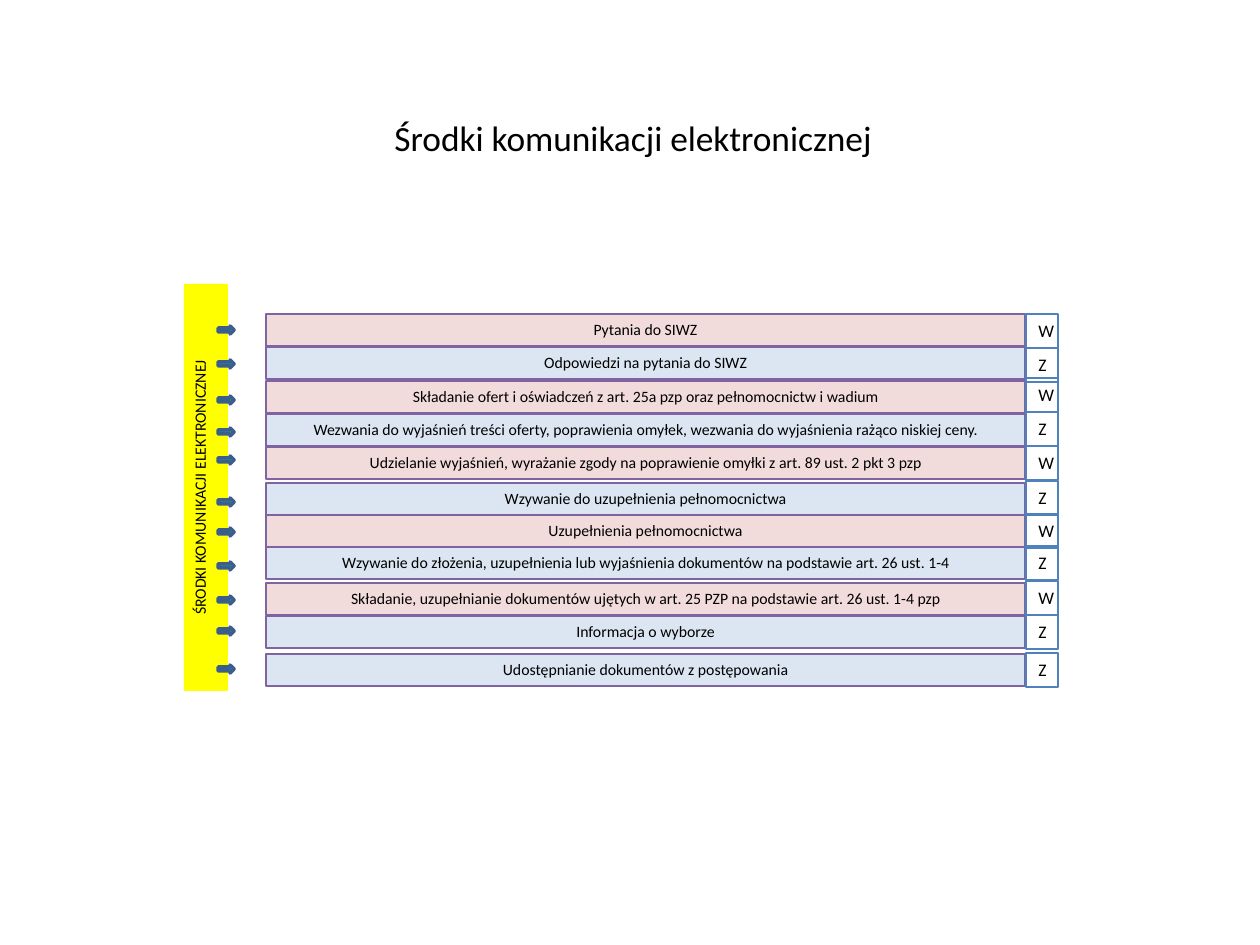
"""Build the slide on electronic means of communication in a tender."""
from dataclasses import dataclass

from pptx import Presentation
from pptx.dml.color import RGBColor
from pptx.enum.shapes import MSO_SHAPE
from pptx.enum.text import MSO_ANCHOR, PP_ALIGN
from pptx.util import Emu, Pt

RECTANGLE, ARROW = MSO_SHAPE.RECTANGLE, MSO_SHAPE.RIGHT_ARROW
CENTER = PP_ALIGN.CENTER
TOP, MIDDLE = MSO_ANCHOR.TOP, MSO_ANCHOR.MIDDLE

TITLE = "Środki komunikacji elektronicznej"
CHANNEL = "ŚRODKI KOMUNIKACJI ELEKTRONICZNEJ"

# party, step, then the tops of the step, the party box and the arrow
STEPS = [
    ("W", "Pytania do SIWZ", 314, 314, 326),
    ("Z", "Odpowiedzi na pytania do SIWZ", 347, 348, 360),
    ("W", "Składanie ofert i oświadczeń z art. 25a pzp oraz pełnomocnictw i wadium",
     381, 378, 396),
    ("Z", "Wezwania do wyjaśnień treści oferty, poprawienia omyłek, "
          "wezwania do wyjaśnienia rażąco niskiej ceny.", 414, 412, 428),
    ("W", "Udzielanie wyjaśnień, wyrażanie zgody na poprawienie omyłki "
          "z art. 89 ust. 2 pkt 3 pzp", 447, 446, 456),
    ("Z", "Wzywanie do uzupełnienia pełnomocnictwa", 483, 481, 498),
    ("W", "Uzupełnienia pełnomocnictwa", 515, 514, 528),
    ("Z", "Wzywanie do złożenia, uzupełnienia lub wyjaśnienia dokumentów "
          "na podstawie art. 26 ust. 1-4", 547, 546, 562),
    ("W", "Składanie, uzupełnianie dokumentów ujętych w art. 25 PZP "
          "na podstawie art. 26 ust. 1-4 pzp", 583, 581, 596),
    ("Z", "Informacja o wyborze", 616, 615, 627),
    ("Z", "Udostępnianie dokumentów z postępowania", 654, 653, 665),
]


@dataclass(frozen=True)
class Theme:
    font: str = "Calibri"
    text: str = "000000"
    contractor: str = "F2DCDB"
    client: str = "DCE6F2"
    step_line: str = "8064A2"
    party_line: str = "4F81BD"
    channel: str = "FFFF00"
    arrow: str = "4F81BD"
    arrow_line: str = "3A5F8C"
    title_size: float = 20.2
    step_size: float = 9
    party_size: float = 10.1
    thin: float = 0.75
    thick: float = 2


THEME = Theme()
PARTY_FILLS = {"W": THEME.contractor, "Z": THEME.client}


def px(length):
    return Emu(round(length * 914400 / 126))


def color(code):
    return RGBColor.from_string(code)


def write(frame, wording, size, anchor):
    frame.word_wrap = True
    frame.vertical_anchor = anchor
    paragraph = frame.paragraphs[0]
    paragraph.text = wording
    paragraph.alignment = CENTER
    paragraph.font.name = THEME.font
    paragraph.font.size = Pt(size)
    paragraph.font.color.rgb = color(THEME.text)


def add_box(slide, kind, place, fill=None, line=None, weight=THEME.thin):
    box = slide.shapes.add_shape(kind, *map(px, place))
    box.shadow.inherit = False
    if fill:
        box.fill.solid()
        box.fill.fore_color.rgb = color(fill)
    else:
        box.fill.background()
    if line:
        box.line.color.rgb = color(line)
        box.line.width = Pt(weight)
    else:
        box.line.fill.background()
    return box


def main():
    deck = Presentation()
    deck.slide_width, deck.slide_height = px(1260), px(945)
    slide = deck.slides.add_slide(deck.slide_layouts[5])

    title = slide.shapes.title
    title.left, title.top, title.width, title.height = map(px, (241, 102, 784, 71))
    write(title.text_frame, TITLE, THEME.title_size, MIDDLE)

    channel = add_box(slide, RECTANGLE, (184, 284, 44, 407), THEME.channel)
    write(channel.text_frame, CHANNEL, THEME.step_size, TOP)
    channel.text_frame._txBody.bodyPr.set("vert", "vert270")

    for party, wording, step_top, party_top, arrow_top in STEPS:
        step = add_box(slide, RECTANGLE, (266, step_top, 759, 32),
                       PARTY_FILLS[party], THEME.step_line)
        write(step.text_frame, wording, THEME.step_size, TOP)
        party_box = add_box(slide, RECTANGLE, (1026, party_top, 32, 34),
                            line=THEME.party_line)
        write(party_box.text_frame, party, THEME.party_size, TOP)
        add_box(slide, ARROW, (218, arrow_top, 16, 8),
                THEME.arrow, THEME.arrow_line, THEME.thick)

    deck.save("out.pptx")


if __name__ == "__main__":
    main()
